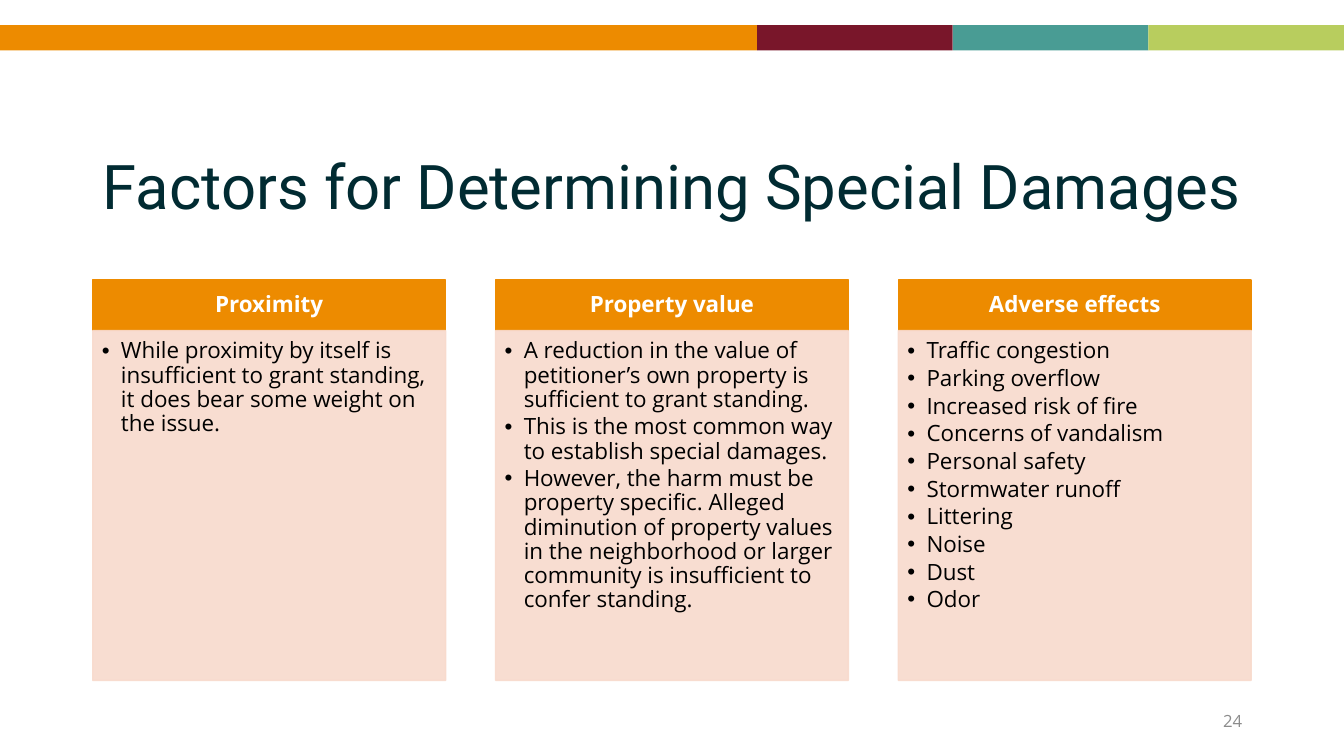
"""Build the slide on factors for determining special damages."""
from dataclasses import dataclass

from lxml import etree
from pptx import Presentation
from pptx.dml.color import RGBColor
from pptx.enum.shapes import MSO_SHAPE
from pptx.enum.text import MSO_ANCHOR as Anchor, PP_ALIGN as Align
from pptx.oxml.ns import qn
from pptx.shapes.autoshape import Shape
from pptx.slide import Slide
from pptx.text.text import TextFrame, _Paragraph as Paragraph
from pptx.util import Inches, Pt

ORANGE, PEACH, WHITE, BLACK = "ED8B00", "F8DACC", "FFFFFF", "000000"
BODY_FONT = "Open Sans"
CONTENT_LEFT, CONTENT_RIGHT = 0.92, 12.41
COLUMN_WIDTH = 3.5
HEADER_TOP, HEADER_HEIGHT, BODY_HEIGHT = 2.78, 0.5, 3.47
BULLET_INDENT = 0.19


@dataclass(frozen=True)
class Box:
    left: float
    top: float
    width: float
    height: float

    def lengths(self) -> list[Inches]:
        return [Inches(value) for value in (self.left, self.top, self.width, self.height)]


@dataclass(frozen=True)
class TextStyle:
    font: str
    size: float
    color: str
    align: Align = Align.LEFT
    bold: bool = False
    line_spacing: float = 1.0
    space_after: float = 0


@dataclass(frozen=True)
class Factor:
    heading: str
    points: tuple[str, ...]


@dataclass(frozen=True)
class Stripe:
    width: float
    color: str


TITLE_STYLE = TextStyle("Roboto", 44, "012B32", Align.CENTER, line_spacing=0.9)
HEADING_STYLE = TextStyle(BODY_FONT, 16, WHITE, Align.CENTER, True, 0.9)
POINT_STYLE = TextStyle(BODY_FONT, 16, BLACK, line_spacing=0.9, space_after=2.5)
NUMBER_STYLE = TextStyle(BODY_FONT, 12, "8C8C8C", Align.RIGHT)

STRIPES = (
    Stripe(7.51, ORANGE),
    Stripe(1.94, "79162A"),
    Stripe(1.94, "499C94"),
    Stripe(1.94, "B8CD5E"),
)

FACTORS = (
    Factor("Proximity", (
        "While proximity by itself is insufficient to grant standing, "
        "it does bear some weight on the issue.",
    )),
    Factor("Property value", (
        "A reduction in the value of petitioner’s own property is sufficient to grant standing.",
        "This is the most common way to establish special damages.",
        "However, the harm must be property specific. Alleged diminution of property values "
        "in the neighborhood or larger community is insufficient to confer standing.",
    )),
    Factor("Adverse effects", (
        "Traffic congestion",
        "Parking overflow",
        "Increased risk of fire",
        "Concerns of vandalism",
        "Personal safety",
        "Stormwater runoff",
        "Littering",
        "Noise",
        "Dust",
        "Odor",
    )),
)


def rgb(color: str) -> RGBColor:
    return RGBColor.from_string(color)


def set_margins(frame: TextFrame, left: float, top: float, right: float, bottom: float) -> None:
    frame.margin_left, frame.margin_top = Inches(left), Inches(top)
    frame.margin_right, frame.margin_bottom = Inches(right), Inches(bottom)


def add_rectangle(slide: Slide, box: Box, color: str, outlined: bool = False) -> Shape:
    shape = slide.shapes.add_shape(MSO_SHAPE.RECTANGLE, *box.lengths())
    shape.shadow.inherit = False
    shape.fill.solid()
    shape.fill.fore_color.rgb = rgb(color)
    if outlined:
        shape.line.color.rgb = rgb(color)
        shape.line.width = Pt(1)
    else:
        shape.line.fill.background()
    return shape


def set_opacity(shape: Shape, percent: int) -> None:
    for color in shape.element.spPr.iter(qn("a:srgbClr")):
        etree.SubElement(color, qn("a:alpha"), val=str(percent * 1000))


def add_bullet(paragraph: Paragraph) -> None:
    properties = paragraph._p.get_or_add_pPr()
    properties.set("marL", str(Inches(BULLET_INDENT)))
    properties.set("indent", str(-Inches(BULLET_INDENT)))
    etree.SubElement(properties, qn("a:buFont"), typeface="Arial")
    etree.SubElement(properties, qn("a:buChar"), char="•")


def write(frame: TextFrame, lines: tuple[str, ...], style: TextStyle,
          anchor: Anchor = Anchor.MIDDLE, bulleted: bool = False) -> None:
    frame.word_wrap = True
    frame.vertical_anchor = anchor
    frame.text = "\n".join(lines)
    for paragraph in frame.paragraphs:
        if bulleted:
            add_bullet(paragraph)
            paragraph.level = 1
        paragraph.alignment = style.align
        paragraph.line_spacing = style.line_spacing
        paragraph.space_after = Pt(style.space_after)
        for run in paragraph.runs:
            run.font.name = style.font
            run.font.size = Pt(style.size)
            run.font.bold = style.bold
            run.font.color.rgb = rgb(style.color)


def add_label(slide: Slide, box: Box, text: str, style: TextStyle) -> None:
    write(slide.shapes.add_textbox(*box.lengths()).text_frame, (text,), style)


def add_stripes(slide: Slide) -> None:
    left = 0.0
    for stripe in STRIPES:
        add_rectangle(slide, Box(left, 0.25, stripe.width, 0.25), stripe.color)
        left += stripe.width


def add_factor(slide: Slide, factor: Factor, left: float) -> None:
    header_box = Box(left, HEADER_TOP, COLUMN_WIDTH, HEADER_HEIGHT)
    header = add_rectangle(slide, header_box, ORANGE, outlined=True)
    set_margins(header.text_frame, 0.12, 0.07, 0.12, 0.07)
    write(header.text_frame, (factor.heading,), HEADING_STYLE)

    body_box = Box(left, HEADER_TOP + HEADER_HEIGHT, COLUMN_WIDTH, BODY_HEIGHT)
    body = add_rectangle(slide, body_box, PEACH, outlined=True)
    set_opacity(body, 90)
    set_margins(body.text_frame, 0.09, 0.09, 0.12, 0.14)
    write(body.text_frame, factor.points, POINT_STYLE, Anchor.TOP, bulleted=True)


def main() -> None:
    presentation = Presentation()
    presentation.slide_width, presentation.slide_height = Inches(13.33), Inches(7.5)
    slide = presentation.slides.add_slide(presentation.slide_layouts[6])
    add_stripes(slide)
    add_label(slide, Box(CONTENT_LEFT, 1.16, 11.5, 1.45),
              "Factors for Determining Special Damages", TITLE_STYLE)
    pitch = (CONTENT_RIGHT - CONTENT_LEFT - COLUMN_WIDTH) / (len(FACTORS) - 1)
    for index, factor in enumerate(FACTORS):
        add_factor(slide, factor, CONTENT_LEFT + index * pitch)
    add_label(slide, Box(9.42, 6.95, 3, 0.4), "24", NUMBER_STYLE)
    presentation.save("out.pptx")


if __name__ == "__main__":
    main()
